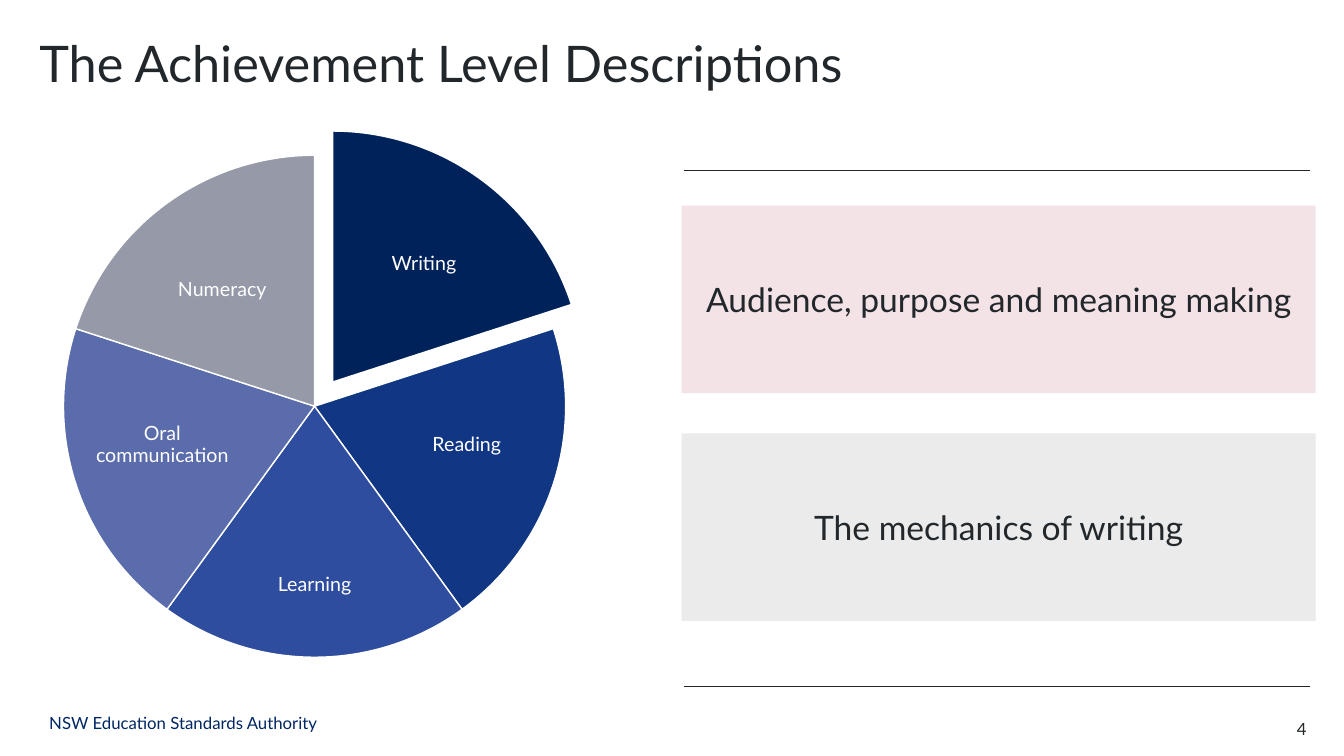
import pptx
import pptx.dml.color
import pptx.enum.shapes
import pptx.enum.text
import pptx.oxml.ns
import pptx.util
from lxml import etree

Inches = pptx.util.Inches
Pt = pptx.util.Pt
Align = pptx.enum.text.PP_ALIGN
Anchor = pptx.enum.text.MSO_ANCHOR
Shape = pptx.enum.shapes.MSO_SHAPE

INK = "22272B"
WHITE = "FFFFFF"
NAVY = "002664"

# Name, colour, label box relative to the pie's box
SLICES = [
    ("Writing", "00225B", (2.73, 0.5, 1.69, 1.16)),
    ("Reading", "113683", (3.26, 2.25, 1.48, 1.25)),
    ("Learning", "2E4D9E", (1.6, 3.73, 1.78, 1.07)),
    ("Oral communication", "5A6CAB", (0.24, 2.25, 1.48, 1.25)),
    ("Numeracy", "9599A8", (0.73, 0.76, 1.69, 1.16)),
]
PANELS = [
    ("Audience, purpose and meaning making", "F3E2E6"),
    ("The mechanics of writing", "EBEBEB"),
]


def color(hex_string):
    return pptx.dml.color.RGBColor.from_string(hex_string)


def set_values(target, values):
    for name, value in values.items():
        setattr(target, name, value)


def place(shape, box):
    set_values(shape, dict(zip(("left", "top", "width", "height"), map(Inches, box))))


def write(shape, text, size, ink=INK, align=Align.LEFT, anchor=Anchor.TOP,
          inset=(0, 0), spacing=1.0):
    across, down = map(Inches, inset)
    frame = shape.text_frame
    set_values(frame, {
        "word_wrap": True, "auto_size": pptx.enum.text.MSO_AUTO_SIZE.NONE,
        "vertical_anchor": anchor, "margin_left": across, "margin_right": across,
        "margin_top": down, "margin_bottom": down,
    })
    para = frame.paragraphs[0]
    set_values(para, {"alignment": align, "line_spacing": spacing})
    span = para.add_run()
    span.text = text
    set_values(span.font, {"name": "Lato", "size": Pt(size)})
    span.font.color.rgb = color(ink)


def add_text(page, box, text, size, **formats):
    write(page.shapes.add_textbox(*map(Inches, box)), text, size, **formats)


def add_filled(page, kind, box, fill):
    shape = page.shapes.add_shape(kind, *map(Inches, box))
    shape.shadow.inherit = False
    shape.fill.solid()
    shape.fill.fore_color.rgb = color(fill)
    shape.line.fill.background()
    return shape


def add_rule(page, left, top, width):
    rule = page.shapes.add_connector(
        pptx.enum.shapes.MSO_CONNECTOR.STRAIGHT,
        *map(Inches, (left, top, left + width, top)))
    rule.line.color.rgb = color(INK)
    rule.line.width = Pt(0.5)
    etree.SubElement(rule._element.spPr, pptx.oxml.ns.qn("a:effectLst"))


def build_title(page, box):
    place(page.shapes.title, box)
    write(page.shapes.title, "The Achievement Level Descriptions", 36, spacing=0.9)


def build_pie(page, box):
    left, top, width, height = box
    # Adjustments count a full turn as 216 and the top of the circle as 162
    turn, start = 216, 162
    step = turn / len(SLICES)
    for index, (name, fill, (dx, dy, label_width, label_height)) in enumerate(SLICES):
        # The first slice is pulled out of the pie
        pull_x, pull_y = (0.18, -0.24) if index == 0 else (0, 0)
        wedge = add_filled(page, Shape.PIE,
                           (left + pull_x, top + pull_y, width, height), fill)
        wedge.adjustments[0] = round((start + index * step) % turn, 2)
        wedge.adjustments[1] = round((start + (index + 1) * step) % turn, 2)
        wedge.line.color.rgb = color(WHITE)
        wedge.line.width = Pt(1)
        add_text(page, (left + dx, top + dy, label_width, label_height), name, 14,
                 ink=WHITE, align=Align.CENTER, anchor=Anchor.MIDDLE,
                 inset=(0.02, 0.02), spacing=0.9)


def build_panels(page, box):
    left, top, width, height = box
    # Rules above and below
    for rule_top in (top, top + height):
        add_rule(page, left + 0.02, rule_top, width - 0.08)
    # Coloured panels
    for index, (text, fill) in enumerate(PANELS):
        panel = add_filled(page, Shape.RECTANGLE,
                           (left, top + 0.35 + index * 2.26, width, 1.86), fill)
        write(panel, text, 24, align=Align.CENTER, anchor=Anchor.MIDDLE)


def build_footer(page, box):
    left, top, width, height = box
    add_text(page, (left, top, 9.33, height), "NSW Education Standards Authority", 12,
             ink=NAVY, anchor=Anchor.BOTTOM, inset=(0.1, 0.05))
    add_text(page, (left + width - 0.79, top + 0.56, 0.79, 0.2), "4", 12,
             align=Align.RIGHT)


def main():
    deck = pptx.Presentation()
    deck.slide_width, deck.slide_height = Inches(13.33), Inches(7.5)
    page = deck.slides.add_slide(deck.slide_layouts.get_by_name("Title Only"))
    build_title(page, (0.39, 0.39, 11.02, 1.1))
    build_pie(page, (0.63, 1.54, 4.98, 4.98))
    build_panels(page, (6.76, 1.69, 6.29, 5.12))
    build_footer(page, (0.39, 6.57, 12.57, 0.75))
    deck.save("out.pptx")


if __name__ == "__main__":
    main()
